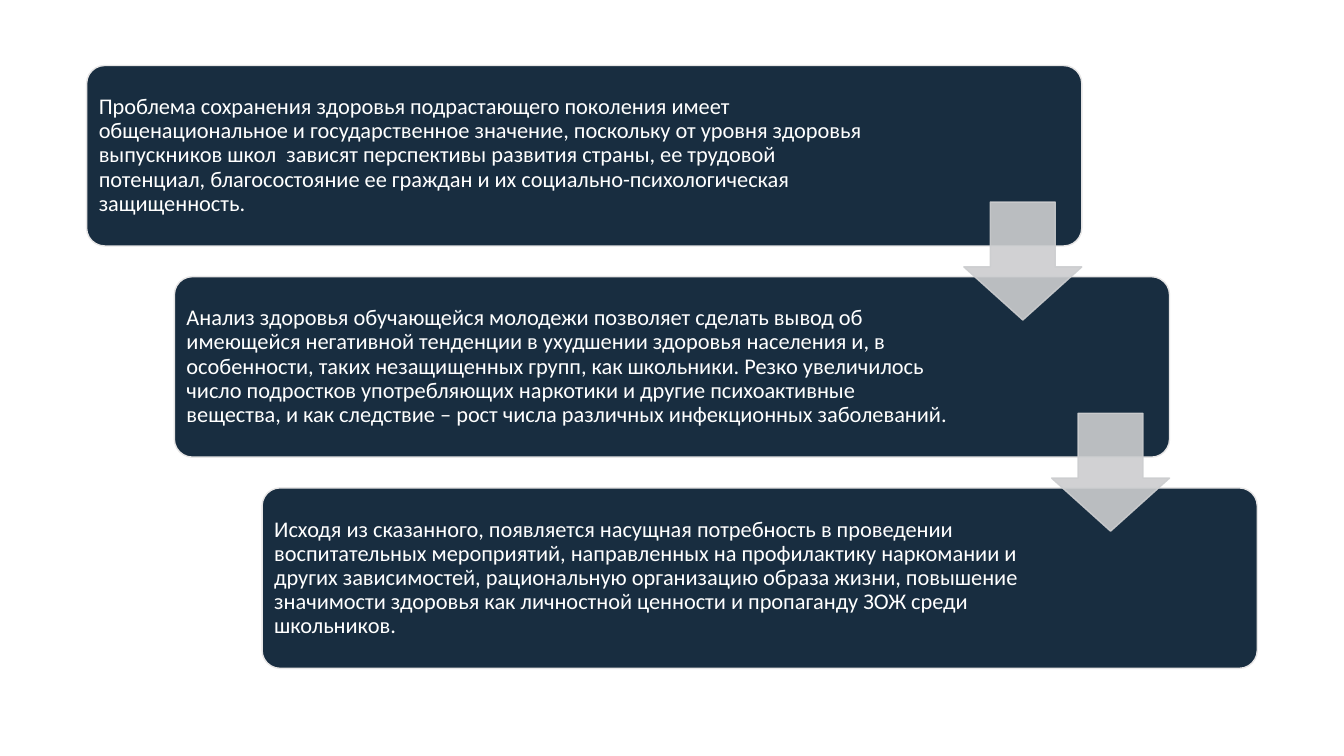
from lxml.etree import SubElement
from pptx import Presentation
from pptx.dml.color import RGBColor
from pptx.enum.shapes import MSO_SHAPE
from pptx.enum.text import MSO_ANCHOR, PP_ALIGN
from pptx.oxml.ns import qn
from pptx.util import Inches, Pt

COLORS = {"panel": "182D40", "panel_line": "E7E6E6", "arrow": "CCCDCF", "text": "FFFFFF"}
FIRST_LEFT, FIRST_TOP = 0.86, 0.65
STEP_X, STEP_Y = 0.87, 2.095
PANEL_WIDTH, PANEL_HEIGHT = 9.87, 1.79
TEXT_INSET = 0.05
ARROW_SIZE = 1.17
ARROW_DROP = 1.355

# Text of each step and the width of its text area
STEPS = [
    ("Проблема сохранения здоровья подрастающего поколения имеет общенациональное "
     "и государственное значение, поскольку от уровня здоровья выпускников школ  зависят "
     "перспективы развития страны, ее трудовой потенциал, благосостояние ее граждан "
     "и их социально-психологическая защищенность.", 7.94),
    ("Анализ здоровья обучающейся молодежи позволяет сделать вывод об имеющейся "
     "негативной тенденции в ухудшении здоровья населения и, в особенности, таких "
     "незащищенных групп, как школьники. Резко увеличилось число подростков "
     "употребляющих наркотики и другие психоактивные вещества, и как следствие – "
     "рост числа различных инфекционных заболеваний.", 7.73),
    ("Исходя из сказанного, появляется насущная потребность в проведении воспитательных "
     "мероприятий, направленных на профилактику наркомании и других зависимостей, "
     "рациональную организацию образа жизни, повышение значимости здоровья как "
     "личностной ценности и пропаганду ЗОЖ среди школьников.", 7.73),
]


def add_filled_shape(slide, kind, box, adjustments, fill, line):
    shape = slide.shapes.add_shape(kind, *(Inches(value) for value in box))
    shape.shadow.inherit = False
    for index, value in enumerate(adjustments):
        shape.adjustments[index] = value
    shape.fill.solid()
    shape.fill.fore_color.rgb = RGBColor.from_string(COLORS[fill])
    shape.line.color.rgb = RGBColor.from_string(COLORS[line])
    shape.line.width = Pt(1)
    return shape


def add_step(slide, left, top, text, text_width):
    add_filled_shape(slide, MSO_SHAPE.ROUNDED_RECTANGLE,
                     (left, top, PANEL_WIDTH, PANEL_HEIGHT), [0.1], "panel", "panel_line")
    box = slide.shapes.add_textbox(Inches(left + TEXT_INSET), Inches(top + TEXT_INSET),
                                   Inches(text_width), Inches(PANEL_HEIGHT - 2 * TEXT_INSET))
    frame = box.text_frame
    frame.word_wrap = True
    frame.vertical_anchor = MSO_ANCHOR.MIDDLE
    frame.margin_left = frame.margin_right = Inches(0.07)
    frame.margin_top = frame.margin_bottom = Inches(0.07)
    para = frame.paragraphs[0]
    para.text = text
    para.alignment = PP_ALIGN.LEFT
    para.line_spacing = 0.9
    font = para.runs[0].font
    font.name = "Calibri"
    font.size = Pt(16)
    font.color.rgb = RGBColor.from_string(COLORS["text"])


def add_step_arrow(slide, left, top):
    """Place the arrow at the lower right corner of the step that starts at left, top."""
    box = (left + PANEL_WIDTH - ARROW_SIZE, top + ARROW_DROP, ARROW_SIZE, ARROW_SIZE)
    arrow = add_filled_shape(slide, MSO_SHAPE.DOWN_ARROW, box, [0.55, 0.45], "arrow", "arrow")
    # The first adjustment is the head length, the second the shaft width
    arrow.adjustments[0], arrow.adjustments[1] = 0.55, 0.45
    for color in arrow._element.spPr.iter(qn("a:srgbClr")):
        SubElement(color, qn("a:alpha"), val="90000")


def build_staircase(slide, left, top):
    corners = [(left + index * STEP_X, top + index * STEP_Y) for index in range(len(STEPS))]
    for corner, (text, text_width) in zip(corners, STEPS):
        add_step(slide, *corner, text, text_width)
    for corner in corners[:-1]:
        add_step_arrow(slide, *corner)


def main():
    deck = Presentation()
    deck.slide_width, deck.slide_height = Inches(13.33), Inches(7.5)
    slide = deck.slides.add_slide(deck.slide_layouts[6])
    build_staircase(slide, FIRST_LEFT, FIRST_TOP)
    deck.save("out.pptx")


if __name__ == "__main__":
    main()
